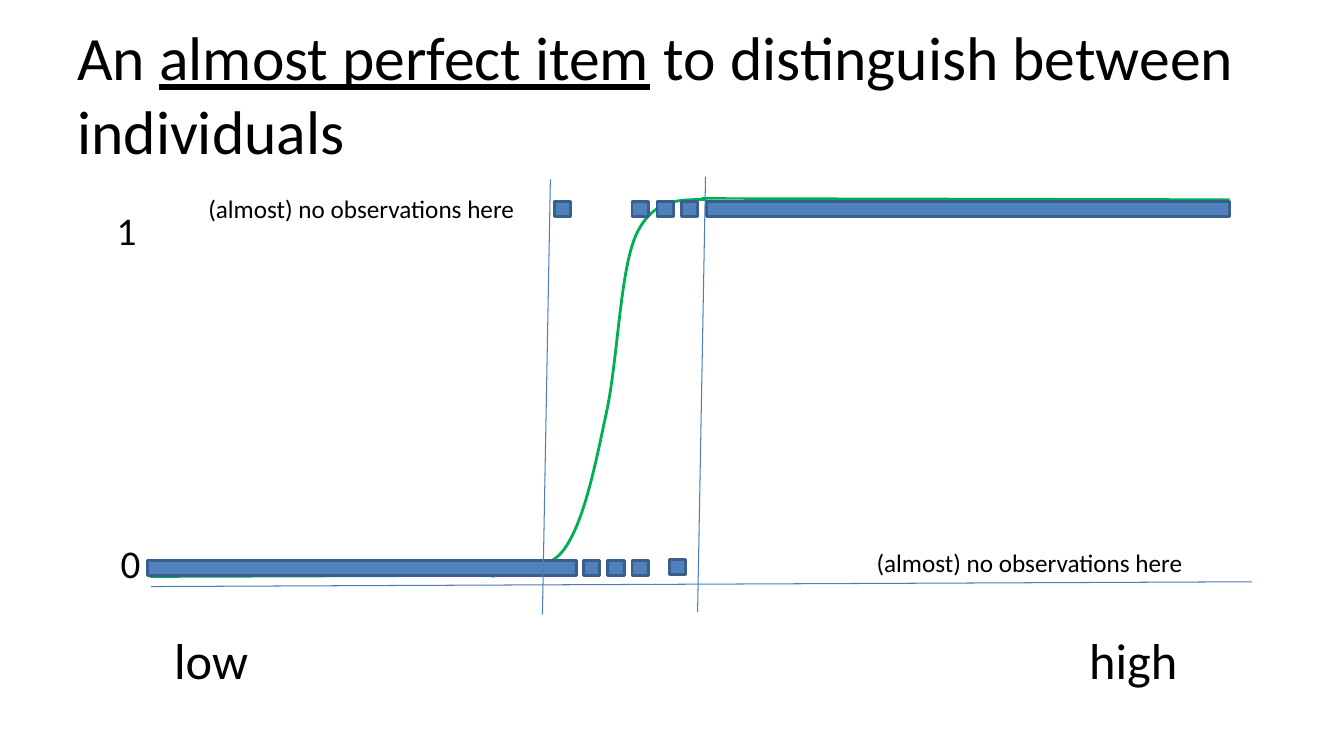
"""Build a slide showing the response curve of an almost perfect item."""
import pptx
import pptx.dml.color
import pptx.enum.shapes
import pptx.enum.text
import pptx.oxml
import pptx.oxml.ns
import pptx.util
from pptx.util import Cm

color = pptx.dml.color.RGBColor.from_string
BLACK, GREEN, THIN_BLUE = "000000", "00B050", "4B7EBC"
BAR_FILL, BAR_EDGE = "4F81BD", "3A5F8C"

presentation = pptx.Presentation()
presentation.slide_width = Cm(33.87)
presentation.slide_height = Cm(19.05)
slide = presentation.slides.add_slide(presentation.slide_layouts[6])


def add_text(left, top, width, height, size, runs, wrap=False):
    box = slide.shapes.add_textbox(Cm(left), Cm(top), Cm(width), Cm(height))
    frame = box.text_frame
    frame.word_wrap = wrap
    frame.vertical_anchor = pptx.enum.text.MSO_ANCHOR.MIDDLE if wrap else pptx.enum.text.MSO_ANCHOR.TOP
    if not wrap:
        frame.auto_size = pptx.enum.text.MSO_AUTO_SIZE.SHAPE_TO_FIT_TEXT
    paragraph = frame.paragraphs[0]
    paragraph.font.name = "Calibri"
    paragraph.font.size = pptx.util.Pt(size)
    paragraph.font.color.rgb = color(BLACK)
    for text, underlined in runs:
        run = paragraph.add_run()
        run.text = text
        if underlined:
            run.font.underline = True


def add_line(x1, y1, x2, y2, line_color, width):
    connector = slide.shapes.add_connector(
        pptx.enum.shapes.MSO_CONNECTOR.STRAIGHT, Cm(x1), Cm(y1), Cm(x2), Cm(y2))
    connector.line.color.rgb = color(line_color)
    connector.line.width = pptx.util.Pt(width)
    properties = connector.element.find(pptx.oxml.ns.qn("p:spPr"))
    properties.append(pptx.oxml.parse_xml("<a:effectLst %s/>" % pptx.oxml.ns.nsdecls("a")))


title_runs = [("An ", False), ("almost perfect item", True),
              (" to distinguish between individuals", False)]
add_text(1.7, 0.76, 30.48, 3.18, 44, title_runs, wrap=True)

add_line(3.81, 14.78, 31.55, 14.66, THIN_BLUE, 0.75)

labels = [
    (4.14, 15.72, 2.39, 1.8, 36, "low"),
    (27.2, 15.72, 2.77, 1.8, 36, "high"),
    (2.79, 13.46, 1.02, 1.45, 28, "0"),
    (2.69, 5.08, 1.02, 1.45, 28, "1"),
    (5.0, 4.75, 8.31, 1.02, 18, "(almost) no observations here"),
    (21.84, 13.67, 8.31, 1.02, 18, "(almost) no observations here"),
]
for left, top, width, height, size, text in labels:
    add_text(left, top, width, height, size, [(text, False)])

curve_start = (17.81, 5.03)
curve_segments = [
    [(17.12, 5.03), (16.46, 5.0), (16.03, 5.92)],
    [(15.62, 6.83), (15.57, 9.14), (15.27, 10.46)],
    [(14.99, 11.79), (14.71, 13.16), (14.22, 13.84)],
    [(13.74, 14.5), (12.67, 14.4), (12.4, 14.53)],
]
STEPS = 20
curve_points = [curve_start]
for control_1, control_2, end in curve_segments:
    start = curve_points[-1]
    for step in range(1, STEPS + 1):
        t = step / STEPS
        curve_points.append(tuple(
            (1 - t) ** 3 * a + 3 * (1 - t) ** 2 * t * b + 3 * (1 - t) * t ** 2 * c + t ** 3 * d
            for a, b, c, d in zip(start, control_1, control_2, end)))
curve_points = [(Cm(x), Cm(y)) for x, y in curve_points]
builder = slide.shapes.build_freeform(*curve_points[0])
builder.add_line_segments(curve_points[1:], close=False)
curve = builder.convert_to_shape()
curve.shadow.inherit = False
curve.fill.background()
curve.line.color.rgb = color(GREEN)
curve.line.width = pptx.util.Pt(2)

add_line(17.68, 5.0, 30.99, 5.03, GREEN, 1.75)
add_line(3.78, 14.53, 12.45, 14.5, GREEN, 1.75)

MARKER = 0.41
observations = [(3.71, 14.12, 10.82), (17.81, 5.08, 13.18)]
observations += [(left, 14.12, MARKER) for left in (14.71, 15.32, 15.93)]
observations += [(left, 5.08, MARKER) for left in (13.97, 15.93, 16.56, 17.17)]
observations.append((16.87, 14.1, MARKER))
for left, top, width in observations:
    bar = slide.shapes.add_shape(
        pptx.enum.shapes.MSO_SHAPE.RECTANGLE, Cm(left), Cm(top), Cm(width), Cm(0.38))
    bar.shadow.inherit = False
    bar.fill.solid()
    bar.fill.fore_color.rgb = color(BAR_FILL)
    bar.line.color.rgb = color(BAR_EDGE)
    bar.line.width = pptx.util.Pt(2)

for x, top in ((13.87, 4.52), (17.78, 4.45)):
    add_line(x, top, x - 0.2, top + 10.97, THIN_BLUE, 0.75)

presentation.save("out.pptx")
